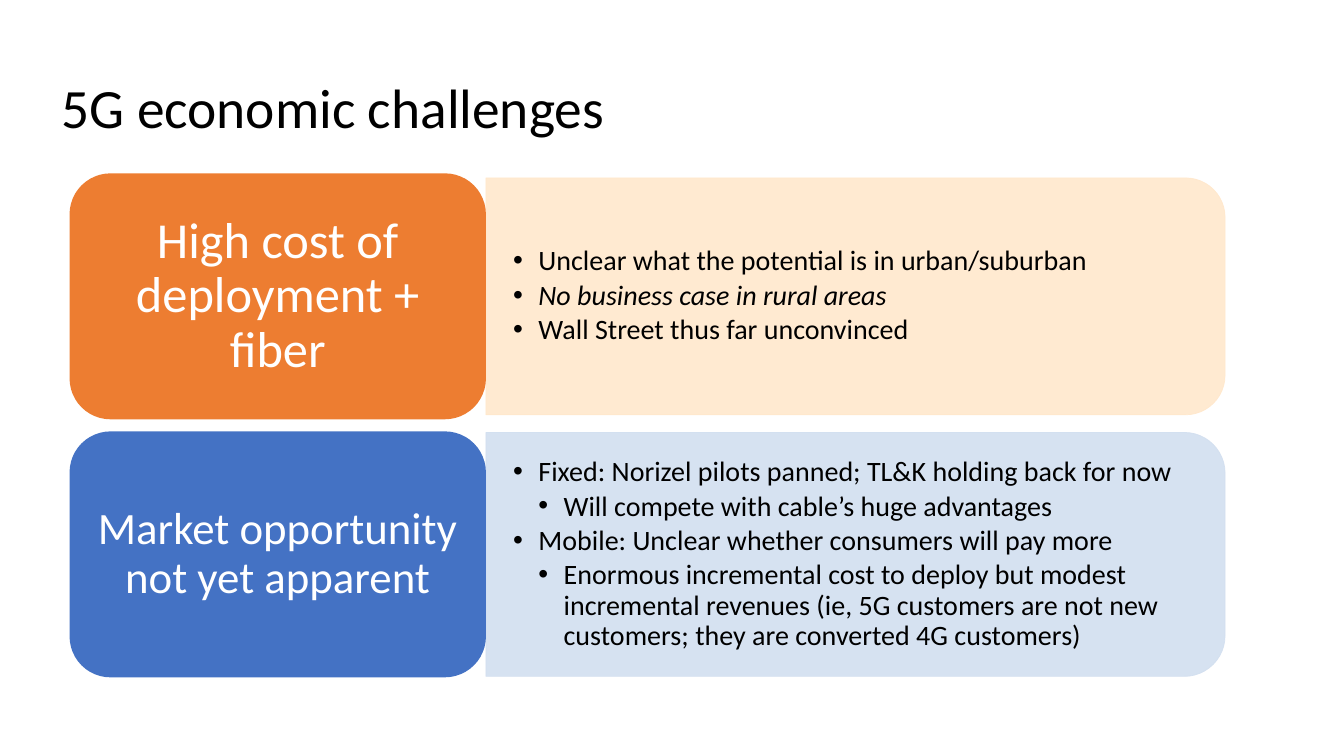
from pptx import Presentation
from pptx.util import Inches, Pt
from pptx.dml.color import RGBColor
from pptx.enum.shapes import MSO_SHAPE as SHAPE
from pptx.enum.text import MSO_ANCHOR as ANCHOR, MSO_AUTO_SIZE as AUTO, PP_ALIGN as ALIGN
from pptx.oxml.ns import qn
from lxml.etree import SubElement

# Content
TITLE = "5G economic challenges"
# label, label size, label margin, label fill, panel fill, panel height, [(level, text, italic)]
ROWS = [
    ("High cost of deployment + fiber", 36, 0.15, "ED7D31", "FFE8CC", 2.35, [
        (0, "Unclear what the potential is in urban/suburban", False),
        (0, "No business case in rural areas", True),
        (0, "Wall Street thus far unconvinced", False),
    ]),
    ("Market opportunity not yet apparent", 32, 0.13, "4472C4", "D2DFF0", 2.42, [
        (0, "Fixed: Norizel pilots panned; TL&K holding back for now", False),
        (1, "Will compete with cable’s huge advantages", False),
        (0, "Mobile: Unclear whether consumers will pay more", False),
        (1, "Enormous incremental cost to deploy but modest incremental revenues "
            "(ie, 5G customers are not new customers; they are converted 4G customers)", False),
    ]),
]

# Grid, in inches
LEFT, TOP = 0.69, 1.72
LABEL_W, LABEL_H, PITCH = 4.13, 2.44, 2.56
PANEL_X, PANEL_W, LIST_W = LEFT + LABEL_W, 7.33, 7.22
INDENT = 0.25


def rgb(color):
    return RGBColor.from_string(color)


def place(s, x, y, w, h):
    s.left, s.top, s.width, s.height = (Inches(v) for v in (x, y, w, h))


def set_frame(tf, mx, my):
    tf.word_wrap, tf.auto_size, tf.vertical_anchor = True, AUTO.NONE, ANCHOR.MIDDLE
    tf.margin_left = tf.margin_right = Inches(mx)
    tf.margin_top = tf.margin_bottom = Inches(my)


def format_text(p, size, color, align=ALIGN.LEFT, after=0, italic=False):
    p.alignment, p.line_spacing = align, 0.9
    p.space_before, p.space_after = Pt(0), Pt(after)
    for r in p.runs:
        r.font.name, r.font.size, r.font.italic = "Calibri", Pt(size), italic
        r.font.color.rgb = rgb(color)


def add_bullet(p, level):
    p.level = level
    pPr = p._p.get_or_add_pPr()
    pPr.set("marL", str(Inches(INDENT * (level + 1))))
    pPr.set("indent", str(-Inches(INDENT)))
    SubElement(pPr, qn("a:buFont")).set("typeface", "Arial")
    SubElement(pPr, qn("a:buChar")).set("char", "•")


def add_box(kind, x, y, w, h, color):
    s = slide.shapes.add_shape(kind, *(Inches(v) for v in (x, y, w, h)))
    s.shadow.inherit = False
    s.fill.solid()
    s.fill.fore_color.rgb = rgb(color)
    s.line.fill.background()
    return s


prs = Presentation()
prs.slide_width, prs.slide_height = Inches(13.33), Inches(7.5)
slide = prs.slides.add_slide(prs.slide_layouts[3])

# Title
title = slide.shapes.title
place(title, 0.51, 0.78, 11.5, 0.64)
title.text_frame.text = TITLE
set_frame(title.text_frame, 0.1, 0.05)
format_text(title.text_frame.paragraphs[0], 39.6, "000000")

for i, (label, size, margin, label_fill, panel_fill, panel_h, items) in enumerate(ROWS):
    y = TOP + i * PITCH
    mid = y + LABEL_H / 2

    # Panel: a tall shape turned so that its round end points right
    panel = add_box(SHAPE.ROUND_2_SAME_RECTANGLE, PANEL_X + (PANEL_W - panel_h) / 2,
                    mid - PANEL_W / 2, panel_h, PANEL_W, panel_fill)
    panel.rotation = 90
    panel.line.color.rgb = rgb(panel_fill)
    panel.line.width = Pt(0.5)
    for color in panel._element.spPr.iter(qn("a:srgbClr")):
        SubElement(color, qn("a:alpha")).set("val", "90000")

    # List on the panel
    body = slide.placeholders[i + 1]
    place(body, PANEL_X, mid - panel_h / 2, LIST_W, panel_h)
    slide.shapes._spTree.append(body._element)
    tf = body.text_frame
    tf.text = "\n".join(text for _, text, _ in items)
    set_frame(tf, 0.27, 0.14)
    for p, (level, _, italic) in zip(tf.paragraphs, items):
        format_text(p, 20, "000000", after=3, italic=italic)
        add_bullet(p, level)

    # Label
    s = add_box(SHAPE.ROUNDED_RECTANGLE, LEFT, y, LABEL_W, LABEL_H, label_fill)
    s.text_frame.text = label
    set_frame(s.text_frame, margin, 0.07)
    format_text(s.text_frame.paragraphs[0], size, "FFFFFF", ALIGN.CENTER)

prs.save("out.pptx")
